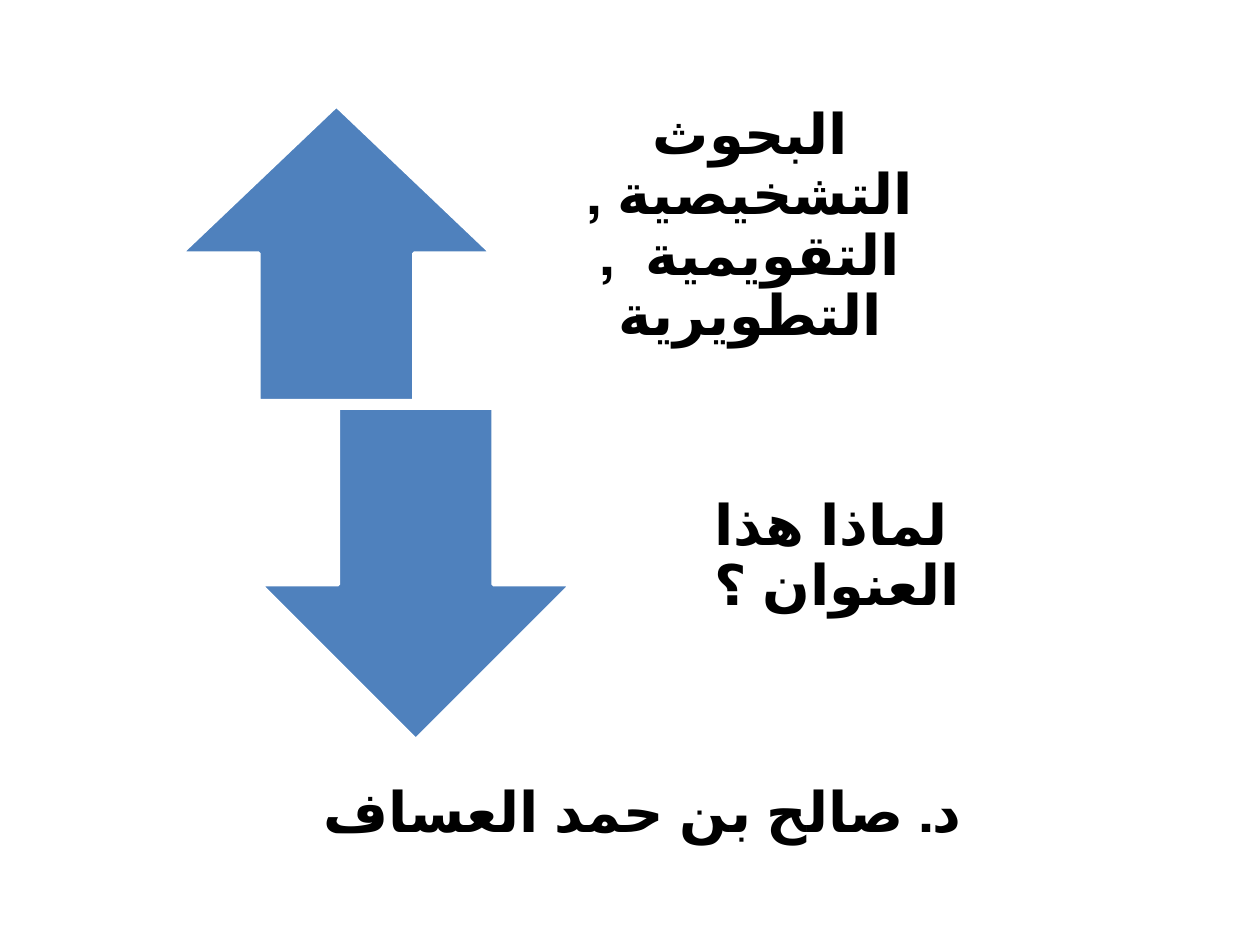
from dataclasses import dataclass

import pptx
import pptx.dml.color
import pptx.enum.lang
import pptx.enum.shapes
import pptx.enum.text
import pptx.util

Inches = pptx.util.Inches
Pt = pptx.util.Pt
RGB = pptx.dml.color.RGBColor
SHAPE = pptx.enum.shapes.MSO_SHAPE
ALIGN = pptx.enum.text.PP_ALIGN


@dataclass(frozen=True)
class Theme:
    font: str = "Calibri"
    size: int = 32
    text: RGB = RGB(0, 0, 0)
    arrow: RGB = RGB(0x4F, 0x81, 0xBD)
    outline: RGB = RGB(255, 255, 255)


THEME = Theme()


def write_rtl(p, text, align):
    """Add one bold Arabic run to a right-to-left paragraph."""
    p.alignment = align
    p._p.get_or_add_pPr().set("rtl", "1")
    r = p.add_run()
    r.text = text
    r.font.name = THEME.font
    r.font.size = Pt(THEME.size)
    r.font.bold = True
    r.font.color.rgb = THEME.text
    r.font.language_id = pptx.enum.lang.MSO_LANGUAGE_ID.ARABIC


def place(sp, box):
    sp.left, sp.top, sp.width, sp.height = map(Inches, box)


def add_arrow(s, kind, box):
    sp = s.shapes.add_shape(kind, *map(Inches, box))
    sp.shadow.inherit = False
    sp.fill.solid()
    sp.fill.fore_color.rgb = THEME.arrow
    sp.line.color.rgb = THEME.outline
    sp.line.width = Pt(2)


def add_label(s, text, box, align):
    tf = s.shapes.add_textbox(*map(Inches, box)).text_frame
    tf.word_wrap = True
    tf.vertical_anchor = pptx.enum.text.MSO_ANCHOR.MIDDLE
    tf.margin_left = tf.margin_right = tf.margin_bottom = Inches(0.25)
    tf.margin_top = 0
    p = tf.paragraphs[0]
    p.line_spacing = 0.9
    write_rtl(p, text, align)


def main():
    prs = pptx.Presentation()
    prs.slide_width, prs.slide_height = Inches(10), Inches(7.5)
    s = prs.slides.add_slide(prs.slide_layouts[0])
    title = s.shapes.title._element
    title.getparent().remove(title)

    author = s.placeholders[1]
    place(author, (1.54, 6.11, 7, 1.08))
    write_rtl(author.text_frame.paragraphs[0], "د. صالح بن حمد العساف ", ALIGN.CENTER)

    add_arrow(s, SHAPE.UP_ARROW, (1.44, 0.84, 2.46, 2.34))
    add_label(s, "البحوث التشخيصية , التقويمية  , التطويرية",
              (3.62, 1.45, 4.67, 0.95), ALIGN.CENTER)
    add_arrow(s, SHAPE.DOWN_ARROW, (2.07, 3.24, 2.46, 2.63))
    add_label(s, "لماذا هذا العنوان ؟", (5.42, 4.06, 2.66, 0.98), ALIGN.LEFT)

    prs.save("out.pptx")


if __name__ == "__main__":
    main()
